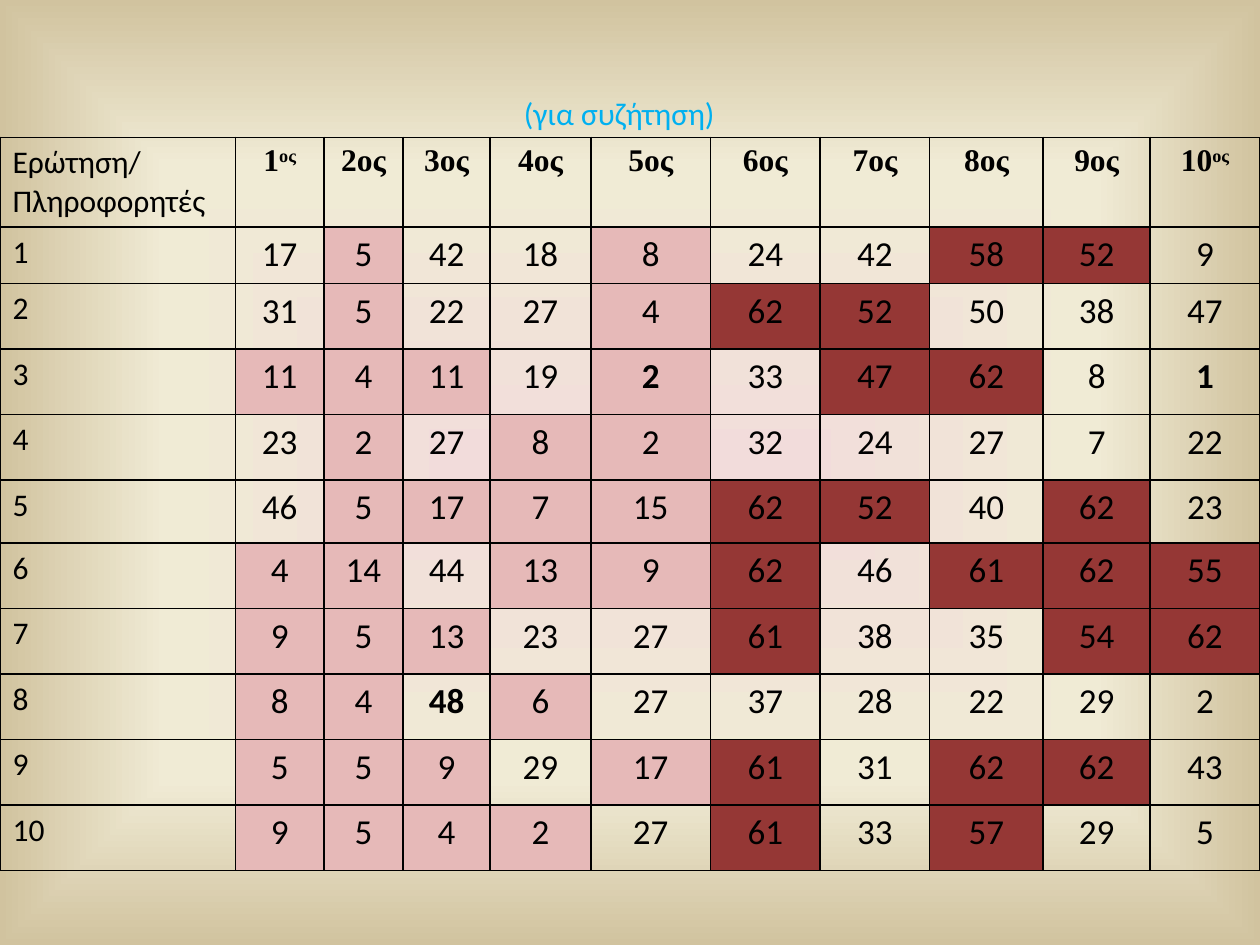
from pptx import Presentation
from pptx.dml.color import RGBColor
from pptx.enum.text import PP_ALIGN
from pptx.oxml import parse_xml
from pptx.oxml.ns import nsdecls
from pptx.util import Inches, Pt

COLORS = {"ink": "000000", "title": "00B0F0", "low": "E6B9B8", "high": "953735",
          "core": "F2DCDB", "mid": "F0EBD5", "edge": "D1C39F"}
WIDTHS = [1.87, 0.7, 0.63, 0.69, 0.8, 0.95, 0.87, 0.87, 0.9, 0.85, 0.87]
HEIGHTS = [0.7, 0.45, 0.52, 0.52, 0.52, 0.5] + [0.52] * 5
MARKS = {"-": "low", "+": "high"}
RAISED = (1, 10)
SCORES = [
    "17 5- 42 18 8- 24 42 58+ 52+ 9",
    "31 5- 22 27 4- 62+ 52+ 50 38 47",
    "11- 4- 11- 19 2-* 33 47+ 62+ 8 1*",
    "23 2- 27 8- 2- 32 24 27 7 22",
    "46 5- 17- 7- 15- 62+ 52+ 40 62+ 23",
    "4- 14- 44 13- 9- 62+ 46 61+ 62+ 55+",
    "9- 5- 13- 23 27 61+ 38 35 54+ 62+",
    "8- 4- 48* 6- 27 37 28 22 29 2",
    "5- 5- 9- 29 17- 61+ 31 62+ 62+ 43",
    "9- 5- 4- 2- 27 61+ 33 57+ 29 5",
]


def add_run(para, text, size=18, color="ink", font="Calibri", bold=False):
    """Append one styled run to a paragraph."""
    run = para.add_run()
    run.text = text
    run.font.size = Pt(size)
    run.font.name = font
    run.font.bold = bold
    run.font.color.rgb = RGBColor.from_string(COLORS[color])
    return run


def paint_back(slide):
    """Fill the slide with a gradient that spreads from its centre."""
    stops = "".join(
        f'<a:gs pos="{pos}"><a:srgbClr val="{COLORS[name]}"/></a:gs>'
        for pos, name in ((0, "core"), (65000, "mid"), (100000, "edge")))
    slide.element.cSld.insert(0, parse_xml(
        f'<p:bg {nsdecls("p", "a")}><p:bgPr><a:gradFill rotWithShape="1">'
        f'<a:gsLst>{stops}</a:gsLst><a:path path="shape">'
        '<a:fillToRect l="50000" t="50000" r="50000" b="50000"/></a:path>'
        '</a:gradFill><a:effectLst/></p:bgPr></p:bg>'))


def style_cell(cell, fill=None):
    """Set the fill of a cell and draw its four borders."""
    if fill:
        cell.fill.solid()
        cell.fill.fore_color.rgb = RGBColor.from_string(COLORS[fill])
    else:
        cell.fill.background()
    props = cell._tc.get_or_add_tcPr()
    for spot, side in enumerate("LRTB"):
        props.insert(spot, parse_xml(
            f'<a:ln{side} {nsdecls("a")} w="12700"><a:solidFill>'
            f'<a:srgbClr val="{COLORS["ink"]}"/></a:solidFill></a:ln{side}>'))


def fill_head(table):
    """Write the header row."""
    for col in range(len(WIDTHS)):
        cell = table.cell(0, col)
        style_cell(cell)
        para = cell.text_frame.paragraphs[0]
        if col == 0:
            add_run(para, "Ερώτηση/ Πληροφορητές")
            continue
        para.alignment = PP_ALIGN.CENTER
        look = {"font": "Times New Roman", "bold": True}
        if col in RAISED:
            add_run(para, str(col), **look)
            end = add_run(para, "ος", **look)
            end.font._element.set("baseline", "30000")
        else:
            add_run(para, f"{col}ος", **look)


def fill_row(table, row, scores):
    """Write a question number and its scores."""
    head = table.cell(row, 0)
    style_cell(head)
    add_run(head.text_frame.paragraphs[0], str(row))
    for col, score in enumerate(scores.split(), 1):
        cell = table.cell(row, col)
        fill = next((MARKS[mark] for mark in MARKS if mark in score), None)
        style_cell(cell, fill)
        para = cell.text_frame.paragraphs[0]
        para.alignment = PP_ALIGN.CENTER
        add_run(para, score.rstrip("+-*"), 20, bold="*" in score)


def add_grid(slide, left, top, width, height):
    """Place the table of scores in the given box."""
    table = slide.shapes.add_table(
        len(HEIGHTS), len(WIDTHS), left, top, width, height).table
    table.first_row = table.horz_banding = False
    for col, size in zip(table.columns, WIDTHS):
        col.width = Inches(size)
    for row, size in zip(table.rows, HEIGHTS):
        row.height = Inches(size)
    fill_head(table)
    for row, scores in enumerate(SCORES, 1):
        fill_row(table, row, scores)


def add_title(slide, left, top, width, height):
    """Place the caption in the given box."""
    frame = slide.shapes.add_textbox(left, top, width, height).text_frame
    frame.word_wrap = True
    add_run(frame.paragraphs[0], "(για συζήτηση)", color="title")


def main():
    """Build and save the slide."""
    deck = Presentation()
    deck.slide_width, deck.slide_height = Inches(10), Inches(7.5)
    slide = deck.slides.add_slide(deck.slide_layouts[6])
    paint_back(slide)
    add_grid(slide, Inches(0), Inches(1.09), Inches(10), Inches(5.79))
    add_title(slide, Inches(4.06), Inches(0.7), Inches(1.87), Inches(0.4))
    deck.save("out.pptx")


if __name__ == "__main__":
    main()
